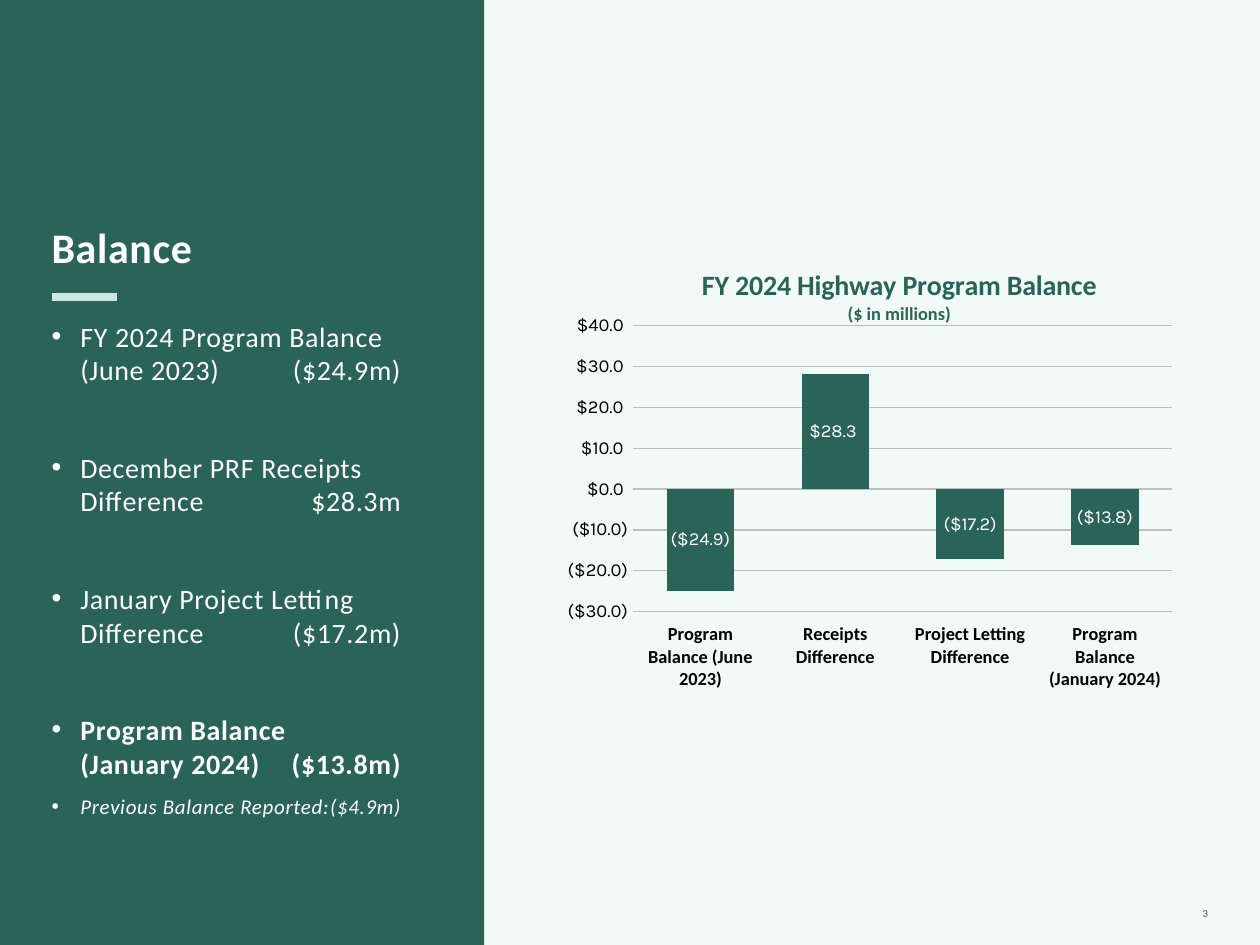
import pptx
import pptx.chart.data
import pptx.dml.color
import pptx.enum.chart
import pptx.enum.shapes
import pptx.enum.text
import pptx.oxml
import pptx.oxml.ns
import pptx.util

Cm = pptx.util.Cm
Pt = pptx.util.Pt

COLOURS = {
    "green": "2A6357", "mint": "CBE9E3", "pale": "F2FAF8", "white": "FFFFFF",
    "black": "000000", "grid": "BFBFBF", "number": "4D4D4F",
}
MONEY = '"$"#,##0.0_);\\("$"#,##0.0\\)'
INDENT = Cm(0.58)
AMOUNT_STOP = Cm(7.04)

# Label, amount, size, bold, italic, space before
BULLETS = [
    ("FY 2024 Program Balance (June 2023)", "($24.9m)", 16, False, False, 9),
    ("December PRF Receipts Difference", "$28.3m", 16, False, False, 36.5),
    ("January Project Letting Difference", "($17.2m)", 16, False, False, 36.5),
    ("Program Balance\v(January 2024)", "($13.8m)", 16, True, False, 36.5),
    ("Previous Balance Reported:", "($4.9m)", 12, False, True, 8),
]
BALANCES = {
    "Program Balance (June 2023)": -24.9,
    "Receipts Difference": 28.3,
    "Project Letting Difference": -17.2,
    "Program Balance (January 2024)": -13.8,
}


def colour(name):
    return pptx.dml.color.RGBColor.from_string(COLOURS[name])


def style_font(font, size, name, face="Calibri", bold=False, italic=False):
    font.size = Pt(size)
    font.name = face
    font.bold = bold
    font.italic = italic
    font.color.rgb = colour(name)


def style_spans(para, size, name, spacing, **style):
    for span in para.runs:
        style_font(span.font, size, name, **style)
        span.font._element.set("spc", str(spacing))


def add_xml(parent, text):
    parent.append(pptx.oxml.parse_xml(text))


def add_text_box(page, left, top, width, height):
    frame = page.shapes.add_textbox(left, top, width, height).text_frame
    frame.word_wrap = True
    frame.margin_left = frame.margin_right = 0
    frame.margin_top = frame.margin_bottom = 0
    return frame


def make_bullet(para):
    props = para._p.get_or_add_pPr()
    props.set("marL", str(INDENT))
    props.set("indent", str(-INDENT))
    space = pptx.oxml.ns.nsdecls("a")
    add_xml(props, f'<a:buFont {space} typeface="Arial"/>')
    add_xml(props, f'<a:buChar {space} char="•"/>')
    add_xml(props, f'<a:tabLst {space}><a:tab pos="{AMOUNT_STOP}" algn="r"/></a:tabLst>')


def add_side_panel(page, left, top, width, height):
    # Green band
    band = page.shapes.add_shape(
        pptx.enum.shapes.MSO_SHAPE.RECTANGLE, left, top, width, height)
    band.shadow.inherit = False
    band.fill.solid()
    band.fill.fore_color.rgb = colour("green")
    band.line.fill.background()

    # Heading and bullets
    margin = left + Cm(1.04)
    frame = add_text_box(page, margin, top + Cm(4.47), Cm(7.72), Cm(12.27))
    heading = frame.paragraphs[0]
    heading.text = "Balance"
    heading.space_after = Pt(18)
    style_spans(heading, 24, "white", 40, bold=True)
    for label, amount, size, bold, italic, before in BULLETS:
        para = frame.add_paragraph()
        para.text = f"{label}\t{amount}"
        para.space_before = Pt(before)
        make_bullet(para)
        style_spans(para, size, "white", 40, bold=bold, italic=italic)

    # Short rule under the heading
    level = top + Cm(5.99)
    rule = page.shapes.add_connector(
        pptx.enum.shapes.MSO_CONNECTOR.STRAIGHT,
        margin, level, margin + Cm(1.32), level)
    rule.line.color.rgb = colour("mint")
    rule.line.width = Pt(4.5)
    add_xml(rule._element.spPr, f'<a:effectLst {pptx.oxml.ns.nsdecls("a")}/>')


def make_layout(target="", **places):
    modes = "".join(f'<c:{key}Mode val="edge"/>' for key in "xy")
    values = "".join(f'<c:{key} val="{value}"/>' for key, value in places.items())
    return pptx.oxml.parse_xml(
        f'<c:layout {pptx.oxml.ns.nsdecls("c")}><c:manualLayout>'
        f"{target}{modes}{values}</c:manualLayout></c:layout>")


def drop_layout(element):
    for layout in element.findall(pptx.oxml.ns.qn("c:layout")):
        element.remove(layout)


def add_balance_chart(page, left, top, width, height):
    data = pptx.chart.data.CategoryChartData()
    data.categories = list(BALANCES)
    data.add_series("Series 1", list(BALANCES.values()))
    chart = page.shapes.add_chart(
        pptx.enum.chart.XL_CHART_TYPE.COLUMN_CLUSTERED,
        left, top, width, height, data).chart
    style_font(chart.font, 10, "black", face="Karla")
    chart.has_legend = False

    # Title
    frame = chart.chart_title.text_frame
    frame.text = "FY 2024 Highway Program Balance\n($ in millions)"
    for para, size in zip(frame.paragraphs, (16, 10.5)):
        style_font(para.runs[0].font, size, "green", bold=True)
    title = chart.chart_title._element
    drop_layout(title)
    title.find(pptx.oxml.ns.qn("c:tx")).addnext(make_layout(x=0.23, y=0.01))

    # Columns and labels
    plot = chart.plots[0]
    plot.gap_width = 100
    plot.overlap = -24
    plot.vary_by_categories = False
    series = plot.series[0]
    series.invert_if_negative = False
    series.format.fill.solid()
    series.format.fill.fore_color.rgb = colour("green")
    labels = series.data_labels
    labels.show_value = True
    labels.position = pptx.enum.chart.XL_LABEL_POSITION.CENTER
    labels.number_format = MONEY
    labels.number_format_is_linked = False
    style_font(labels.font, 10.5, "white", face="Karla")

    # Axes
    categories, values = chart.category_axis, chart.value_axis
    for axis in (categories, values):
        axis.major_tick_mark = pptx.enum.chart.XL_TICK_MARK.NONE
        axis.minor_tick_mark = pptx.enum.chart.XL_TICK_MARK.NONE
    categories.tick_label_position = pptx.enum.chart.XL_TICK_LABEL_POSITION.LOW
    style_font(categories.tick_labels.font, 10.5, "black", bold=True)
    style_font(values.tick_labels.font, 10.5, "black", face="Karla")
    values.minimum_scale, values.maximum_scale, values.major_unit = -30, 40, 10
    values.tick_labels.number_format = MONEY
    values.tick_labels.number_format_is_linked = False
    values.format.line.fill.background()
    for line in (categories.format.line, values.major_gridlines.format.line):
        line.color.rgb = colour("grid")
        line.width = Pt(0.75)

    # Inner plot area
    area = plot._element.getparent()
    drop_layout(area)
    area.insert(0, make_layout('<c:layoutTarget val="inner"/>',
                               x=0.06, y=0.15, w=0.91, h=0.65))
    for key, value in zip("xywh", (0.125, 0.153, 0.87, 0.648)):
        area.find(f".//{{*}}manualLayout/{{*}}{key}").set("val", str(value))


def add_page_number(page, left, top, width, height):
    frame = add_text_box(page, left, top, width, height)
    frame.margin_top = frame.margin_bottom = Cm(0.13)
    frame.vertical_anchor = pptx.enum.text.MSO_ANCHOR.BOTTOM
    para = frame.paragraphs[0]
    para.text = "3"
    para.alignment = pptx.enum.text.PP_ALIGN.RIGHT
    style_spans(para, 6, "number", 110)


def main():
    deck = pptx.Presentation()
    deck.slide_width, deck.slide_height = Cm(25.4), Cm(19.05)
    page = deck.slides.add_slide(deck.slide_layouts[6])
    page.background.fill.solid()
    page.background.fill.fore_color.rgb = colour("pale")
    add_side_panel(page, 0, 0, Cm(9.76), deck.slide_height)
    add_page_number(page, Cm(21.89), Cm(17.65), Cm(2.46), Cm(1.02))
    add_balance_chart(page, Cm(11.2), Cm(5.21), Cm(12.5), Cm(8.89))
    deck.save("out.pptx")


if __name__ == "__main__":
    main()
